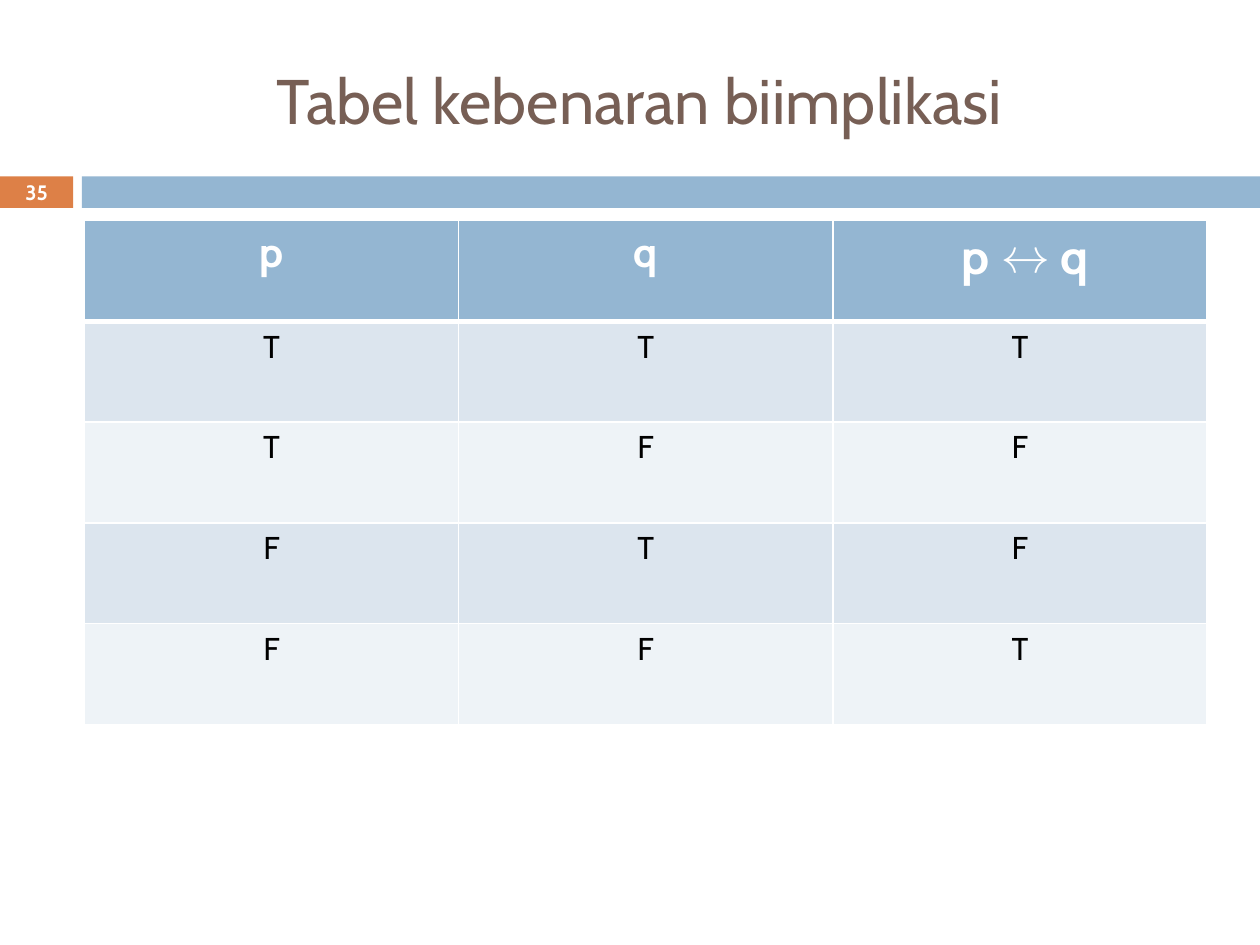
from dataclasses import dataclass

from lxml.etree import SubElement
from pptx import Presentation
from pptx.dml.color import RGBColor
from pptx.enum.shapes import MSO_SHAPE
from pptx.enum.text import MSO_ANCHOR, PP_ALIGN
from pptx.oxml.ns import qn
from pptx.util import Inches, Pt

BLUE, ORANGE, BROWN, WHITE, BLACK = "94B6D2", "DD8047", "775F55", "FFFFFF", "000000"
ROW_FILLS = ("DCE5EE", "EEF3F7")
HEADERS = ("p", "q", " p ↔ q")
HEADER_SIZES = (24, 24, 28)
TRUTH_ROWS = ("TTT", "TFF", "FTF", "FFT")


@dataclass
class Box:
    left: float
    top: float
    width: float
    height: float

    def lengths(self) -> tuple:
        return tuple(Inches(v) for v in (self.left, self.top, self.width, self.height))


@dataclass
class Bar:
    box: Box
    fill: str


@dataclass
class Label:
    box: Box
    text: str
    size: float
    color: str
    bold: bool = False


BARS = (
    Bar(Box(0, 1.4, 0.58, 0.25), ORANGE),
    Bar(Box(0.65, 1.4, 9.35, 0.25), BLUE),
)
LABELS = (
    Label(Box(0.67, 0.25, 8.92, 1.08), "Tabel kebenaran biimplikasi ", 36, BROWN),
    Label(Box(0, 1.39, 0.58, 0.27), "35", 11.9, WHITE, True),
)
TABLE_BOX = Box(0.67, 1.75, 8.91, 4)


def rgb(color: str) -> RGBColor:
    return RGBColor.from_string(color)


def write_text(text_frame, text: str, size: float, color: str, bold: bool) -> None:
    paragraph = text_frame.paragraphs[0]
    paragraph.alignment = PP_ALIGN.CENTER
    run = paragraph.add_run()
    run.text = text
    formats = {"name": "Cabin", "size": Pt(size), "bold": bold}
    for name, value in formats.items():
        setattr(run.font, name, value)
    run.font.color.rgb = rgb(color)


def add_bar(slide, bar: Bar) -> None:
    shape = slide.shapes.add_shape(MSO_SHAPE.RECTANGLE, *bar.box.lengths())
    shape.shadow.inherit = False
    shape.fill.solid()
    shape.fill.fore_color.rgb = rgb(bar.fill)
    shape.line.fill.background()


def add_label(slide, label: Label) -> None:
    text_frame = slide.shapes.add_textbox(*label.box.lengths()).text_frame
    formats = {"word_wrap": True, "vertical_anchor": MSO_ANCHOR.MIDDLE,
               "margin_top": 0, "margin_bottom": 0}
    for name, value in formats.items():
        setattr(text_frame, name, value)
    write_text(text_frame, label.text, label.size, label.color, label.bold)


def set_borders(cell, widths: dict[str, float]) -> None:
    """Add white cell borders, placed before the fill as the schema asks."""
    properties = cell._tc.get_or_add_tcPr()
    for position, (side, width) in enumerate(widths.items()):
        line = SubElement(properties, qn(f"a:{side}"), w=str(Pt(width)))
        fill = SubElement(line, qn("a:solidFill"))
        SubElement(fill, qn("a:srgbClr"), val=WHITE)
        properties.insert(position, line)


def add_truth_table(slide, box: Box) -> None:
    rows = (HEADERS, *TRUTH_ROWS)
    table = slide.shapes.add_table(len(rows), len(HEADERS), *box.lengths()).table
    for row_index, row in enumerate(rows):
        is_header = row_index == 0
        fill = BLUE if is_header else ROW_FILLS[(row_index - 1) % 2]
        for column_index, text in enumerate(row):
            cell = table.cell(row_index, column_index)
            cell.fill.solid()
            cell.fill.fore_color.rgb = rgb(fill)
            size = HEADER_SIZES[column_index] if is_header else 18
            write_text(cell.text_frame, text, size, WHITE if is_header else BLACK, is_header)
            set_borders(cell, {"lnL": 1, "lnR": 1,
                               "lnT": 3 if row_index == 1 else 1,
                               "lnB": 3 if is_header else 1})


def main() -> None:
    presentation = Presentation()
    presentation.slide_width = Inches(10)
    presentation.slide_height = Inches(7.5)
    slide = presentation.slides.add_slide(presentation.slide_layouts[6])

    # Divider bars
    for bar in BARS:
        add_bar(slide, bar)

    # Title and slide number
    for label in LABELS:
        add_label(slide, label)

    # Truth table
    add_truth_table(slide, TABLE_BOX)

    presentation.save("out.pptx")


if __name__ == "__main__":
    main()
